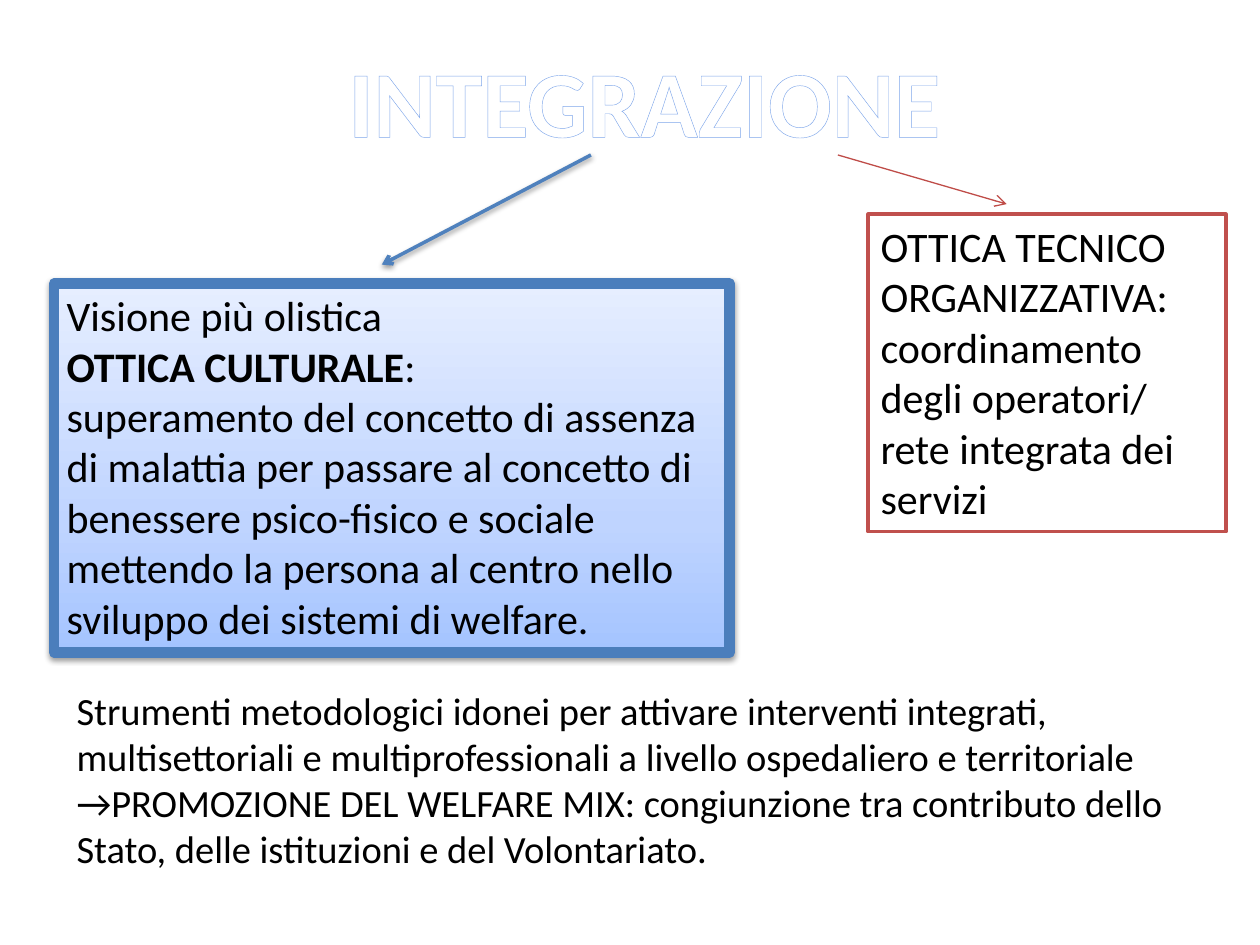
from copy import deepcopy

from lxml import etree
from pptx import Presentation
from pptx.dml.color import RGBColor
from pptx.enum.shapes import MSO_CONNECTOR, MSO_SHAPE
from pptx.enum.text import MSO_ANCHOR, MSO_AUTO_SIZE, PP_ALIGN
from pptx.oxml import parse_xml
from pptx.oxml.ns import qn
from pptx.util import Inches, Pt

RECTANGLE = MSO_SHAPE.RECTANGLE
STRAIGHT = MSO_CONNECTOR.STRAIGHT
TOP = MSO_ANCHOR.TOP
FIT_SHAPE = MSO_AUTO_SIZE.SHAPE_TO_FIT_TEXT
LEFT, CENTER = PP_ALIGN.LEFT, PP_ALIGN.CENTER

BLACK = RGBColor(0x00, 0x00, 0x00)
WHITE = RGBColor(0xFF, 0xFF, 0xFF)
RED = RGBColor(0xC0, 0x50, 0x4D)
ARROW_RED = RGBColor(0xBF, 0x4C, 0x48)
BLUE = RGBColor(0x4B, 0x7E, 0xBC)
ARROW_BLUE = RGBColor(0x4F, 0x81, 0xBD)
GRADIENT = [
    (0, RGBColor(0xA4, 0xC4, 0xFF)),
    (0.35, RGBColor(0xBF, 0xD4, 0xFF)),
    (1, RGBColor(0xE6, 0xEE, 0xFF)),
]

NAMESPACE = 'xmlns:a="http://schemas.openxmlformats.org/drawingml/2006/main"'
SHADOW = (
    f'<a:outerShdw {NAMESPACE} blurRad="39370" dist="20320" dir="5400000" rotWithShape="0">'
    '<a:srgbClr val="000000"><a:alpha val="38000"/></a:srgbClr></a:outerShdw>'
)
TEXT_OUTLINE = (
    f'<a:ln {NAMESPACE} w="31496"><a:solidFill><a:srgbClr val="7EA6EA"/></a:solidFill></a:ln>'
)


def write_text(shape, paragraphs, size=24, color=BLACK, align=LEFT, wrap=True):
    """Each paragraph is a list of (text, bold) runs."""
    frame = shape.text_frame
    frame.word_wrap = wrap
    frame.auto_size = FIT_SHAPE
    frame.vertical_anchor = TOP
    for index, runs in enumerate(paragraphs):
        paragraph = frame.add_paragraph() if index else frame.paragraphs[0]
        paragraph.alignment = align
        for text, bold in runs:
            run = paragraph.add_run()
            run.text = text
            run.font.name = "Calibri"
            run.font.size = Pt(size)
            run.font.bold = bold
            run.font.color.rgb = color


presentation = Presentation()
presentation.slide_width = Inches(10)
presentation.slide_height = Inches(7.5)
slide = presentation.slides.add_slide(presentation.slide_layouts[5])
shapes = slide.shapes

# Title with outlined letters
title = shapes.title
title.left, title.top = Inches(2.64), Inches(0.29)
title.width, title.height = Inches(4.95), Inches(1.01)
write_text(title, [[("INTEGRAZIONE", True)]], size=54, color=WHITE, align=CENTER, wrap=False)
title_run = title.text_frame.paragraphs[0].runs[0]
title_run.font._element.insert(0, parse_xml(TEXT_OUTLINE))

# Technical view box
technical_box = shapes.add_shape(RECTANGLE, Inches(6.89), Inches(1.7), Inches(2.84), Inches(2.52))
technical_box.shadow.inherit = False
technical_box.fill.solid()
technical_box.fill.fore_color.rgb = WHITE
technical_box.line.color.rgb = RED
technical_box.line.width = Pt(2)
write_text(technical_box, [[(
    "OTTICA TECNICO ORGANIZZATIVA: coordinamento degli operatori/ "
    "rete integrata dei servizi", False)]])

# Cultural view box, with a three-stop gradient and a shadow
cultural_box = shapes.add_shape(RECTANGLE, Inches(0.43), Inches(2.25), Inches(5.36), Inches(2.93))
cultural_box.fill.gradient()
cultural_box.fill.gradient_angle = 90
stop_list = cultural_box._element.spPr.find(".//" + qn("a:gsLst"))
stop_list.append(deepcopy(stop_list[-1]))
for stop, (position, color) in zip(cultural_box.fill.gradient_stops, GRADIENT):
    stop.position = position
    stop.color.rgb = color
cultural_box.line.color.rgb = BLUE
cultural_box.line.width = Pt(6)
cultural_box.shadow.inherit = False
cultural_box._element.spPr.find(qn("a:effectLst")).append(parse_xml(SHADOW))
write_text(cultural_box, [
    [("Visione più olistica", False)],
    [("OTTICA CULTURALE", True), (":", False)],
    [("superamento del concetto di assenza di malattia per passare al concetto di "
      "benessere psico-fisico e sociale mettendo la persona al centro nello "
      "sviluppo dei sistemi di welfare.", False)],
])

# Arrows from the title to the boxes
for start, end, color, width, has_shadow in [
    ((6.65, 1.23), (7.99, 1.62), ARROW_RED, 0.75, False),
    ((4.69, 1.23), (3.03, 2.1), ARROW_BLUE, 2, True),
]:
    arrow = shapes.add_connector(STRAIGHT, *map(Inches, start + end))
    arrow.line.color.rgb = color
    arrow.line.width = Pt(width)
    etree.SubElement(arrow.line._get_or_add_ln(), qn("a:tailEnd"), type="arrow")
    effects = etree.SubElement(arrow._element.spPr, qn("a:effectLst"))
    if has_shadow:
        effects.append(parse_xml(SHADOW))

# Closing text
closing = shapes.add_textbox(Inches(0.51), Inches(5.4), Inches(9.13), Inches(1.58))
write_text(closing, [[(
    "Strumenti metodologici idonei per attivare interventi integrati, multisettoriali e "
    "multiprofessionali a livello ospedaliero e territoriale →PROMOZIONE DEL WELFARE MIX: "
    "congiunzione tra contributo dello Stato, delle istituzioni e del Volontariato.",
    False)]], size=22)

presentation.save("out.pptx")
